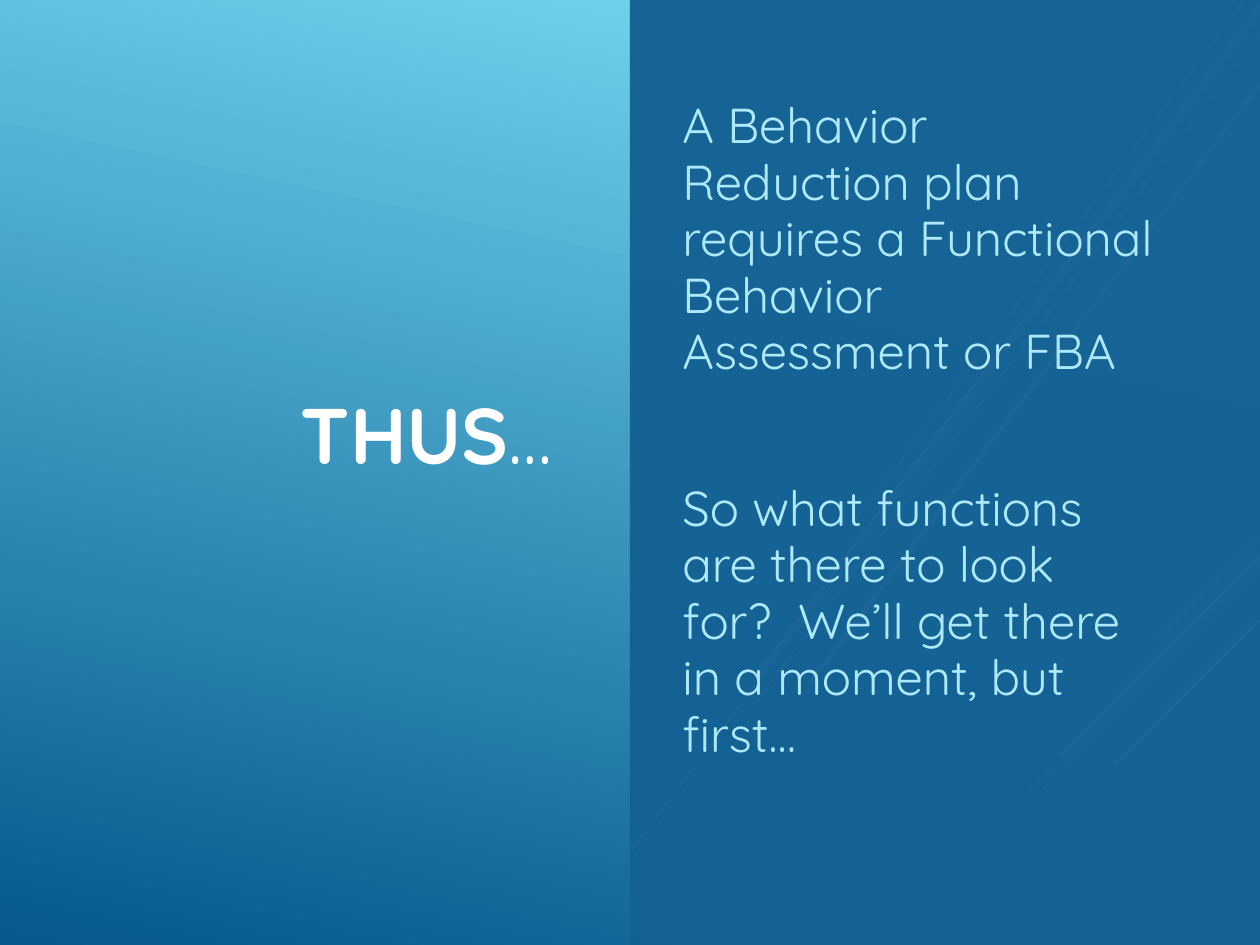
import pptx
import pptx.util
import pptx.dml.color
import pptx.enum.shapes
import pptx.enum.text
import pptx.oxml
import pptx.oxml.ns

RGBColor = pptx.dml.color.RGBColor
Pt = pptx.util.Pt
PP_ALIGN = pptx.enum.text.PP_ALIGN

SKY = RGBColor(0x6E, 0xD2, 0xEB)
DEEP_BLUE = RGBColor(0x06, 0x58, 0x8E)
PANEL_BLUE = RGBColor(0x14, 0x61, 0x94)
PALE_BLUE = RGBColor(0xAD, 0xE9, 0xF8)
WHITE = RGBColor(0xFF, 0xFF, 0xFF)
FONT = "Quicksand"
SLIDE_W, SLIDE_H = 1260, 945
PANEL_OPACITY = 97

RAYS = [
    (1260, 537, 1155, 641, 0.75),
    (1260, 562, 920, 903, 0.75),
    (1260, 573, 1043, 790, 0.75),
    (1259, 557, 1061, 755, 2.25),
    (1259, 620, 1115, 764, 2.25),
    (1244, 1, 851, 527, 1),
    (1260, 13, 631, 851, 1),
    (1260, 32, 747, 714, 1),
    (1260, 5, 759, 673, 2.5),
    (1260, 84, 810, 683, 2.5),
]
TITLE_RUNS = [("THUS", True), ("…", False)]
BODY = [
    ("A Behavior Reduction plan requires a Functional Behavior Assessment or FBA", 6),
    ("So what functions are there to look for?  We’ll get there in a moment, but first…", 51),
]


def px(n):
    return round(n * 914400 / 126)


def add_ray(slide, x1, y1, x2, y2, weight):
    ray = slide.shapes.add_connector(
        pptx.enum.shapes.MSO_CONNECTOR.STRAIGHT, px(x1), px(y1), px(x2), px(y2))
    ray.line.color.rgb = WHITE
    ray.line.width = Pt(weight)
    ray._element.spPr.append(pptx.oxml.parse_xml(
        f"<a:effectLst {pptx.oxml.ns.nsdecls('a')}/>"))


def add_panel(slide):
    panel = slide.shapes.add_shape(
        pptx.enum.shapes.MSO_SHAPE.RECTANGLE,
        px(SLIDE_W // 2), 0, px(SLIDE_W // 2), px(SLIDE_H))
    panel.shadow.inherit = False
    panel.line.fill.background()
    panel.fill.solid()
    panel.fill.fore_color.rgb = PANEL_BLUE
    color = panel._element.spPr.find(".//" + pptx.oxml.ns.qn("a:srgbClr"))
    color.append(pptx.oxml.parse_xml(
        f'<a:alpha {pptx.oxml.ns.nsdecls("a")} val="{PANEL_OPACITY * 1000}"/>'))


def add_text_frame(slide, *box):
    frame = slide.shapes.add_textbox(*map(px, box)).text_frame
    frame.word_wrap = True
    frame.vertical_anchor = pptx.enum.text.MSO_ANCHOR.MIDDLE
    return frame


def add_run(paragraph, text, size, color, bold=False):
    run = paragraph.add_run()
    run.text = text
    run.font.name = FONT
    run.font.size = Pt(size)
    run.font.bold = bold
    run.font.color.rgb = color


def main():
    deck = pptx.Presentation()
    deck.slide_width, deck.slide_height = px(SLIDE_W), px(SLIDE_H)
    slide = deck.slides.add_slide(deck.slide_layouts[6])

    backdrop = slide.background.fill
    backdrop.gradient()
    backdrop.gradient_angle = 360 - 102
    for stop, position, color in zip(
            backdrop.gradient_stops, (0.1, 1), (SKY, DEEP_BLUE)):
        stop.position = position
        stop.color.rgb = color

    for ray in RAYS:
        add_ray(slide, *ray)

    title = add_text_frame(slide, 71, 96, 494, 674).paragraphs[0]
    title.alignment = PP_ALIGN.RIGHT
    for text, bold in TITLE_RUNS:
        add_run(title, text, 45, WHITE, bold)

    add_panel(slide)

    body = add_text_frame(slide, 670, 95, 498, 672)
    for index, (text, space_before) in enumerate(BODY):
        paragraph = body.add_paragraph() if index else body.paragraphs[0]
        paragraph.alignment = PP_ALIGN.LEFT
        paragraph.line_spacing = 0.96
        paragraph.space_before = Pt(space_before)
        paragraph.space_after = Pt(6)
        add_run(paragraph, text, 28, PALE_BLUE)

    deck.save("out.pptx")


if __name__ == "__main__":
    main()
